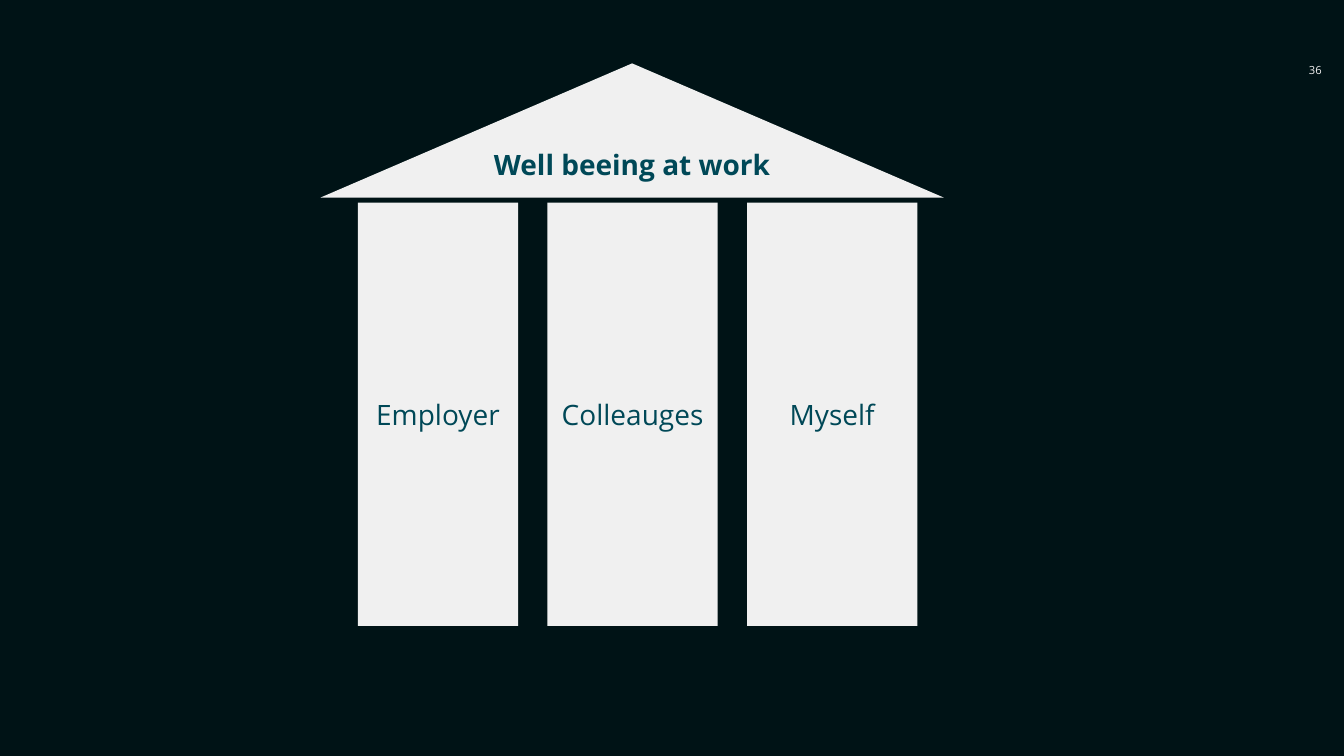
from pptx import Presentation
from pptx.dml.color import RGBColor
from pptx.enum.shapes import MSO_SHAPE as Preset
from pptx.enum.text import MSO_ANCHOR as Anchor, PP_ALIGN as Align
from pptx.util import Pt

NIGHT = RGBColor(0x00, 0x13, 0x16)
STONE = RGBColor(0xF0, 0xF0, 0xF0)
TEAL = RGBColor(0x00, 0x48, 0x57)
FONT = "Open Sans"

SLIDE_WIDTH, SLIDE_HEIGHT = 960, 540
PILLARS = [("Employer", 114.5), ("Colleauges", 121.7), ("Myself", 121.7)]
ROOF_HEIGHT = 95.8
ROOF_GAP = 3.6
PILLAR_INDENT = 26.6
PILLAR_GAP = 20.9


def write_text(shape, text, size=20, color=TEAL, bold=False):
    frame = shape.text_frame
    frame.word_wrap = True
    frame.vertical_anchor = Anchor.MIDDLE
    paragraph = frame.paragraphs[0]
    paragraph.alignment = Align.CENTER
    run = paragraph.add_run()
    run.text = text
    run.font.name = FONT
    run.font.size = Pt(size)
    run.font.bold = bold
    run.font.color.rgb = color


def add_block(slide, preset, left, top, width, height, text, **text_format):
    shape = slide.shapes.add_shape(preset, Pt(left), Pt(top), Pt(width), Pt(height))
    shape.shadow.inherit = False
    shape.fill.solid()
    shape.fill.fore_color.rgb = STONE
    shape.line.fill.background()
    write_text(shape, text, **text_format)
    return shape


def add_page_number(slide, left, top, width, height, number):
    box = slide.shapes.add_textbox(Pt(left), Pt(top), Pt(width), Pt(height))
    frame = box.text_frame
    frame.margin_left = frame.margin_right = frame.margin_top = frame.margin_bottom = 0
    write_text(box, number, size=8, color=STONE)


def add_temple(slide, left, top, width, height):
    pillar_left = left + PILLAR_INDENT
    pillar_top = top + ROOF_HEIGHT + ROOF_GAP
    pillar_height = top + height - pillar_top
    for label, pillar_width in PILLARS:
        add_block(slide, Preset.RECTANGLE, pillar_left, pillar_top,
                  pillar_width, pillar_height, label)
        pillar_left += pillar_width + PILLAR_GAP
    roof = add_block(slide, Preset.ISOSCELES_TRIANGLE, left, top, width, ROOF_HEIGHT,
                     "Well beeing at work", bold=True)
    roof.adjustments[0] = 0.5


def main():
    presentation = Presentation()
    presentation.slide_width = Pt(SLIDE_WIDTH)
    presentation.slide_height = Pt(SLIDE_HEIGHT)
    slide = presentation.slides.add_slide(presentation.slide_layouts[6])
    slide.background.fill.solid()
    slide.background.fill.fore_color.rgb = NIGHT
    add_page_number(slide, 919.4, 41, 40.3, 18, "36")
    add_temple(slide, 229, 45.3, 445, 401.8)
    presentation.save("out.pptx")


if __name__ == "__main__":
    main()
